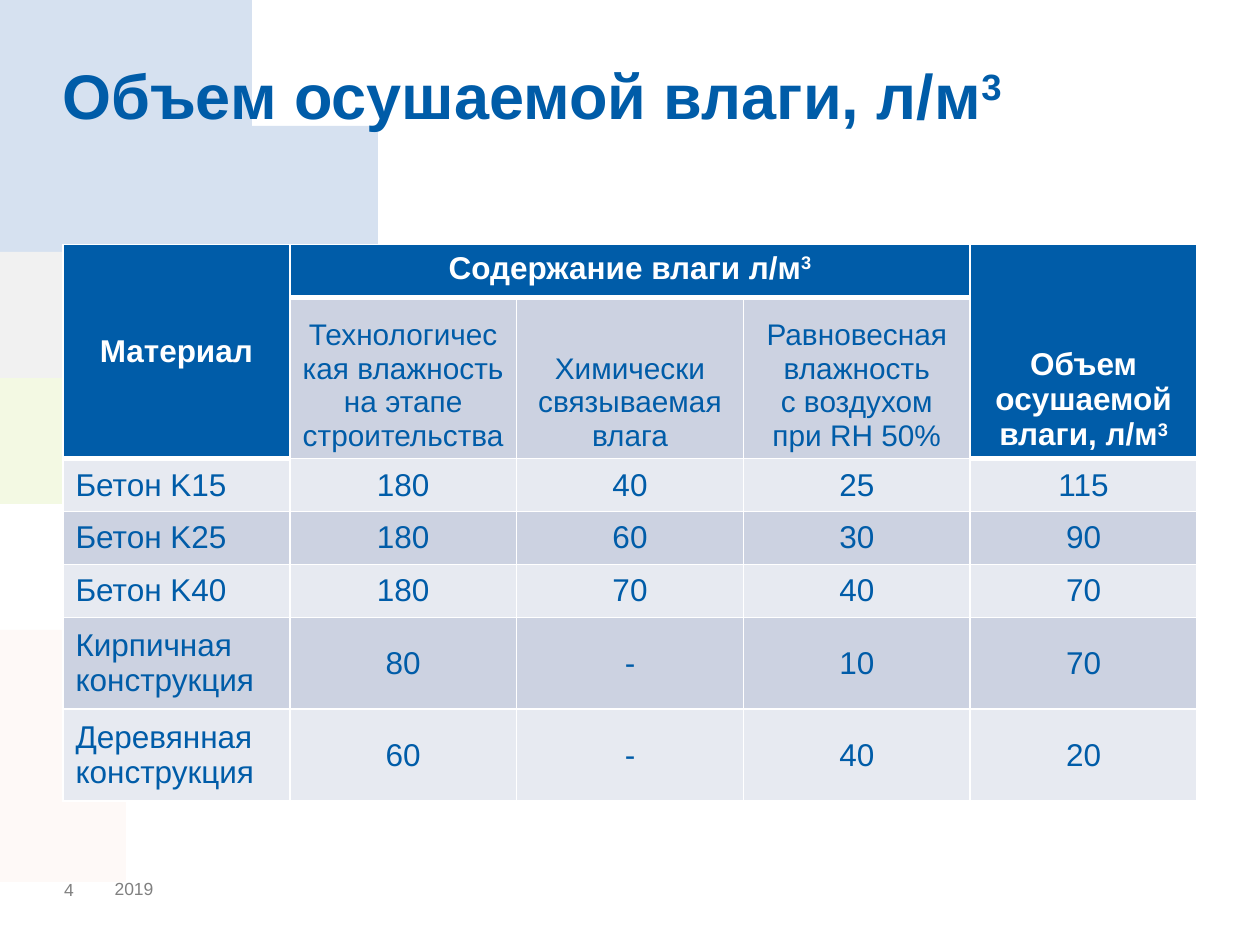
from pptx import Presentation
from pptx.dml.color import RGBColor
from pptx.enum.text import MSO_ANCHOR as Anchor, PP_ALIGN as Align
from pptx.oxml.ns import qn
from pptx.util import Inches, Pt
from lxml.etree import SubElement

W, H = 10, 7.5
MARGIN = W * 0.05
BLUE, WHITE, GREY = "005CA8", "FFFFFF", "808080"
BANDS = ["E7EAF1", "CCD2E1"]

# Background petals: the grey lens shares its two edges with its neighbours
LENS_TOP = [(0, 2.5), (0.29, 2.42), (0.56, 2.35), (0.84, 2.29), (1.13, 2.25), (1.41, 2.22),
            (1.69, 2.2), (1.98, 2.2), (2.18, 2.22), (2.38, 2.27), (2.56, 2.33), (2.69, 2.4),
            (2.83, 2.51)]
LENS_BOTTOM = [(2.83, 2.51), (2.73, 2.68), (2.61, 2.82), (2.47, 2.95), (2.32, 3.07),
               (2.15, 3.15), (1.97, 3.22), (1.79, 3.26), (1.56, 3.28), (1.31, 3.27),
               (1.08, 3.23), (0.82, 3.19), (0.53, 3.13), (0.22, 3.05), (0, 2.98)]
PINK_EDGE = [(1.39, 4.35), (1.23, 4.36), (1.06, 4.4), (0.89, 4.45), (0.72, 4.54), (0.54, 4.64),
             (0.36, 4.77), (0.18, 4.93), (0, 5.12), (0, H), (0.06, H), (0.23, 7.36),
             (0.39, 7.21), (0.58, 7.02), (0.79, 6.8), (1, 6.56), (1.3, 6.21), (1.56, 5.89),
             (1.75, 5.62), (1.89, 5.39), (2, 5.16), (2.06, 4.94), (2.07, 4.81), (2.05, 4.72),
             (2, 4.61), (1.93, 4.53), (1.82, 4.46), (1.69, 4.4), (1.55, 4.36)]
GREEN_EDGE = [(0, 4.32), (0.4, 4.24), (0.75, 4.16), (1.09, 4.07), (1.34, 4.01), (1.55, 3.94),
              (1.84, 3.83), (2.11, 3.7), (2.35, 3.57), (2.55, 3.42), (2.72, 3.28),
              (2.85, 3.13), (2.93, 2.98), (2.97, 2.83), (2.95, 2.71), (2.9, 2.6)]
BLUE_EDGE = [(2.88, 2.41), (2.93, 2.22), (2.96, 2.01), (2.96, 1.83), (2.93, 1.63), (2.88, 1.42),
             (2.81, 1.25), (2.73, 1.09), (2.63, 0.92), (2.53, 0.8), (2.38, 0.64), (2.21, 0.52),
             (2.04, 0.41), (1.87, 0.33), (1.69, 0.26), (1.47, 0.2), (1.22, 0.14), (0.94, 0.08),
             (0.68, 0.04), (0.46, 0.01), (0.3, 0), (0, 0)]
PETALS = [(PINK_EDGE, "FEF9F7"),
          (LENS_BOTTOM + GREEN_EDGE, "F3F9E3"),
          (LENS_TOP + BLUE_EDGE, "D6E1F0"),
          (LENS_TOP + LENS_BOTTOM[1:], "F1F1F1")]

# Table content; "^" starts a superscript
HEADS = [(0, 0, 1, 0, "Материал", Anchor.MIDDLE),
         (0, 1, 0, 3, "Содержание влаги л/м^3", Anchor.TOP),
         (0, 4, 1, 4, "Объем осушаемой влаги, л/м^3", Anchor.BOTTOM)]
SUBHEADS = ["Технологическая влажность на этапе строительства",
            "Химически связываемая влага",
            "Равновесная влажность\nс воздухом при RH 50%"]
MATERIALS = [("Бетон K15", "180", "40", "25", "115"),
             ("Бетон K25", "180", "60", "30", "90"),
             ("Бетон K40", "180", "70", "40", "70"),
             ("Кирпичная конструкция", "80", "-", "10", "70"),
             ("Деревянная конструкция", "60", "-", "40", "20")]
ROW_HEIGHTS = [0.42, 1.28, 0.42, 0.42, 0.42, 0.73, 0.73]


def rgb(value):
    return RGBColor.from_string(value)


def write(tf, text, size, color, bold=False, align=Align.LEFT, spacing=1.0):
    for i, line in enumerate(text.split("\n")):
        p = tf.paragraphs[0] if i == 0 else tf.add_paragraph()
        p.alignment, p.line_spacing = align, spacing
        for k, part in enumerate(line.split("^")):
            r = p.add_run()
            r.text = part
            for name, value in {"size": Pt(size), "bold": bold, "name": "Arial"}.items():
                setattr(r.font, name, value)
            r.font.color.rgb = rgb(color)
            if k:
                r.font._element.set("baseline", "30000")


def add_petal(s, points, color):
    builder = s.shapes.build_freeform(*points[0], scale=Inches(1))
    builder.add_line_segments(points[1:], close=True)
    sp = builder.convert_to_shape()
    sp.shadow.inherit = False
    sp.fill.solid()
    sp.fill.fore_color.rgb = rgb(color)
    sp.line.fill.background()


def add_text(s, box, text, size, color, anchor=Anchor.MIDDLE, **style):
    tf = s.shapes.add_textbox(*map(Inches, box)).text_frame
    frame = dict.fromkeys(["margin_left", "margin_top", "margin_right", "margin_bottom"], 0)
    for name, value in {**frame, "word_wrap": True, "vertical_anchor": anchor}.items():
        setattr(tf, name, value)
    write(tf, text, size, color, **style)


def style_cell(cell, fill, anchor, top=1, bottom=1):
    tcPr = cell._tc.get_or_add_tcPr()
    for side, width in {"L": 1, "R": 1, "T": top, "B": bottom}.items():
        ln = SubElement(tcPr, qn(f"a:ln{side}"), w=str(Pt(width)))
        SubElement(SubElement(ln, qn("a:solidFill")), qn("a:srgbClr"), val=WHITE)
    cell.fill.solid()
    cell.fill.fore_color.rgb = rgb(fill)
    cell.vertical_anchor = anchor


def add_moisture_table(s):
    rows, cols = len(ROW_HEIGHTS), len(MATERIALS[0])
    box = (MARGIN, 1.94, W - 2 * MARGIN, sum(ROW_HEIGHTS))
    table = s.shapes.add_table(rows, cols, *map(Inches, box)).table
    for row, height in zip(table.rows, ROW_HEIGHTS):
        row.height = Inches(height)

    # Merged heads
    for top, left, bottom, right, text, anchor in HEADS:
        for r in range(top, bottom + 1):
            for c in range(left, right + 1):
                style_cell(table.cell(r, c), BLUE, anchor, bottom=3)
        head = table.cell(top, left)
        head.merge(table.cell(bottom, right))
        write(head.text_frame, text, 18, WHITE, True, Align.CENTER)

    # Subheads under the middle head
    for c, text in enumerate(SUBHEADS, 1):
        cell = table.cell(1, c)
        style_cell(cell, BANDS[1], Anchor.BOTTOM, top=3)
        write(cell.text_frame, text, 17, BLUE, align=Align.CENTER)

    # Banded body
    for i, values in enumerate(MATERIALS):
        for c, text in enumerate(values):
            cell = table.cell(i + 2, c)
            under_head = i == 0 and c in (0, cols - 1)
            style_cell(cell, BANDS[i % 2], Anchor.MIDDLE, top=3 if under_head else 1)
            write(cell.text_frame, text, 18, BLUE,
                  align=Align.CENTER if c else Align.JUSTIFY)


def main():
    prs = Presentation()
    prs.slide_width, prs.slide_height = Inches(W), Inches(H)
    s = prs.slides.add_slide(prs.slide_layouts[6])

    # Background
    for points, color in PETALS:
        add_petal(s, points, color)

    # Title and table
    add_text(s, (MARGIN, 0.52, W - 2 * MARGIN, 1.26), "Объем осушаемой влаги, л/м^3",
             36, BLUE, Anchor.TOP, bold=True, spacing=0.9)
    add_moisture_table(s)

    # Footer
    add_text(s, (0.91, 6.98, 0.94, 0.15), "2019", 10, GREY)
    add_text(s, (0.51, 6.98, 0.39, 0.16), "4", 10, GREY)
    prs.save("out.pptx")


if __name__ == "__main__":
    main()
